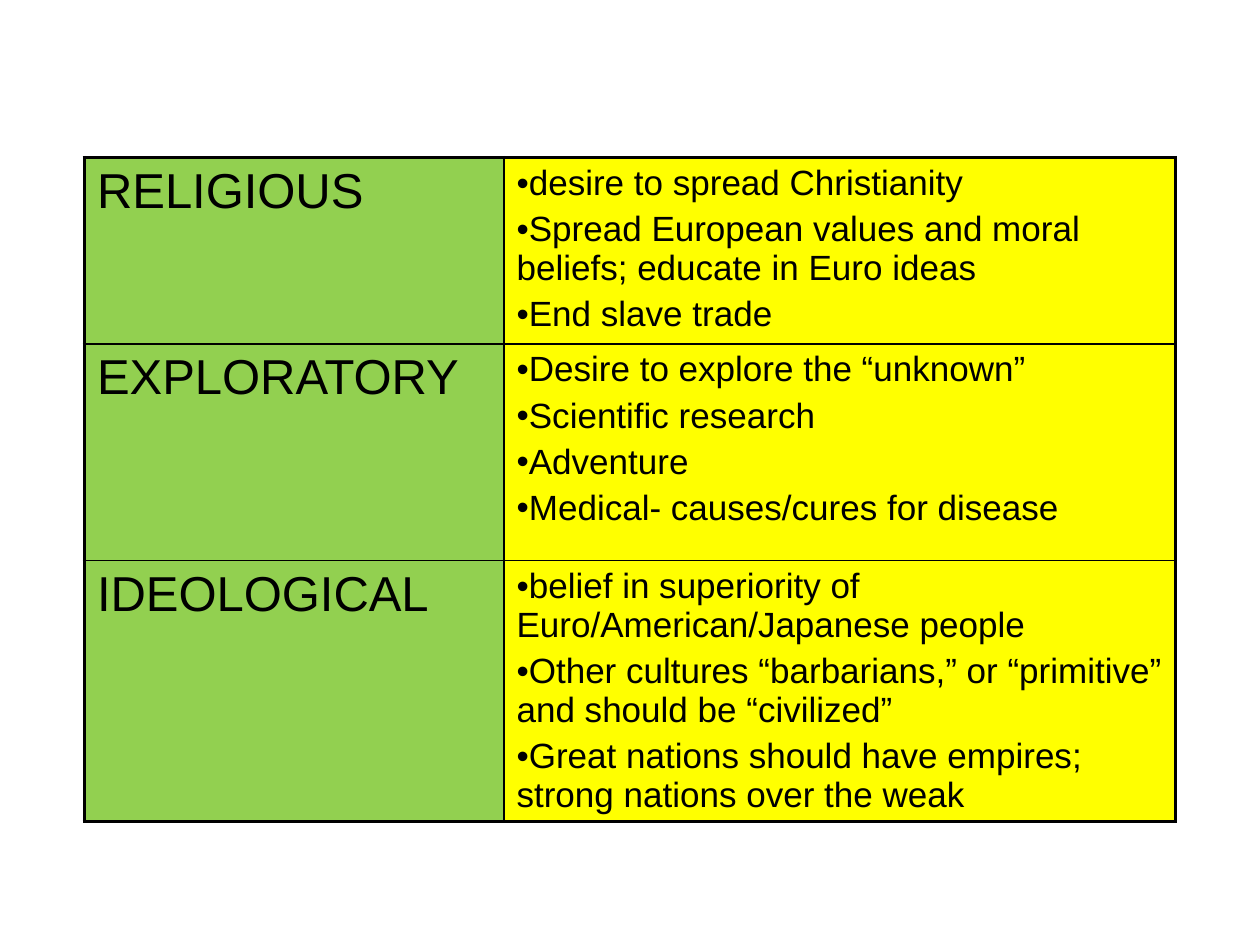
from dataclasses import dataclass

from lxml.etree import SubElement
from pptx import Presentation
from pptx.dml.color import RGBColor
from pptx.oxml.ns import qn
from pptx.util import Inches, Pt


@dataclass(frozen=True)
class Theme:
    font: str = "Arial"
    ink: str = "000000"
    motive_fill: str = "92D050"
    detail_fill: str = "FFFF00"
    motive_size: int = 28
    detail_size: int = 20
    outer_line: float = 2.25
    inner_line: float = 1


THEME = Theme()
COL_WIDTHS = (3.33, 5.33)
ROW_HEIGHTS = (1.48, 1.72, 2.07)

MOTIVES = (
    ("RELIGIOUS", (
        "desire to spread Christianity",
        "Spread European values and moral beliefs; educate in Euro ideas",
        "End slave trade",
    )),
    ("EXPLORATORY", (
        "Desire to explore the “unknown”",
        "Scientific research",
        "Adventure",
        "Medical- causes/cures for disease",
    )),
    ("IDEOLOGICAL", (
        "belief in superiority of Euro/American/Japanese people",
        "Other cultures “barbarians,” or “primitive” and should be “civilized”",
        "Great nations should have empires; strong nations over the weak",
    )),
)


def format_paragraph(p, bulleted):
    """Space of 20% before the paragraph, and a bullet with no indent."""
    pPr = p._p.get_or_add_pPr()
    before = SubElement(pPr, qn("a:spcBef"))
    SubElement(before, qn("a:spcPct"), val="20000")
    if bulleted:
        SubElement(pPr, qn("a:buFont"), typeface=THEME.font)
        SubElement(pPr, qn("a:buChar"), char="•")


def fill_cell(cell, lines, size, fill, bulleted=False):
    cell.fill.solid()
    cell.fill.fore_color.rgb = RGBColor.from_string(fill)
    tf = cell.text_frame
    for i, line in enumerate(lines):
        p = tf.add_paragraph() if i else tf.paragraphs[0]
        format_paragraph(p, bulleted)
        r = p.add_run()
        r.text = line
        r.font.name = THEME.font
        r.font.size = Pt(size)
        r.font.color.rgb = RGBColor.from_string(THEME.ink)


def set_borders(cell, outer):
    """Draw all four sides; outer maps a side to whether it is on the edge."""
    tcPr = cell._tc.get_or_add_tcPr()
    for i, side in enumerate("LRTB"):
        width = THEME.outer_line if outer[side] else THEME.inner_line
        ln = SubElement(tcPr, qn(f"a:ln{side}"), w=str(Pt(width)))
        solid = SubElement(ln, qn("a:solidFill"))
        SubElement(solid, qn("a:srgbClr"), val=THEME.ink)
        tcPr.insert(i, ln)  # borders come before the fill


def add_motives_table(s):
    rows, cols = len(MOTIVES), len(COL_WIDTHS)
    table = s.shapes.add_table(
        rows, cols, Inches(0.67), Inches(1.25),
        Inches(sum(COL_WIDTHS)), Inches(sum(ROW_HEIGHTS))).table
    table.first_row = table.horz_banding = False
    for column, width in zip(table.columns, COL_WIDTHS):
        column.width = Inches(width)
    for row, height in zip(table.rows, ROW_HEIGHTS):
        row.height = Inches(height)

    # Motive on the left, its reasons on the right
    for i, (motive, reasons) in enumerate(MOTIVES):
        fill_cell(table.cell(i, 0), [motive], THEME.motive_size, THEME.motive_fill)
        fill_cell(table.cell(i, 1), reasons, THEME.detail_size,
                  THEME.detail_fill, bulleted=True)
        for j in range(cols):
            set_borders(table.cell(i, j), {
                "L": j == 0, "R": j == cols - 1,
                "T": i == 0, "B": i == rows - 1})


def main():
    prs = Presentation()
    prs.slide_width, prs.slide_height = Inches(10), Inches(7.5)
    s = prs.slides.add_slide(prs.slide_layouts[6])
    add_motives_table(s)
    prs.save("out.pptx")


if __name__ == "__main__":
    main()
